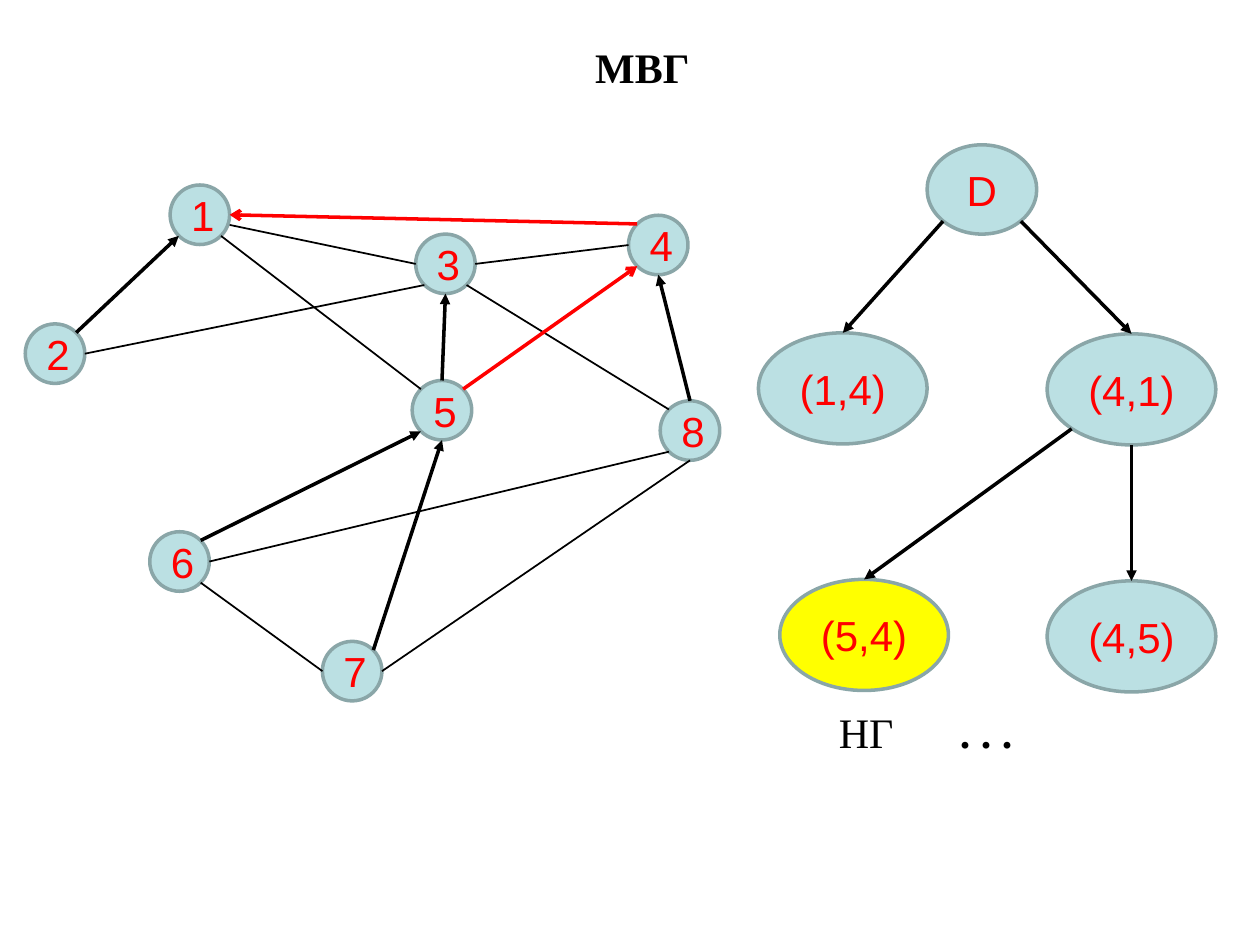
from lxml import etree
from pptx import Presentation
from pptx.dml.color import RGBColor
from pptx.enum import shapes, text
from pptx.oxml import ns
from pptx.util import Cm, Pt

HUES = {"node": "BBE0E3", "rim": "8AA6A8", "mark": "FFFF00",
        "red": "FF0000", "black": "000000"}
DIAG = 0.71
SITES = {"n": (0, -1), "ne": (DIAG, -DIAG), "e": (1, 0), "ese": (1, 0.34),
         "se": (DIAG, DIAG), "s": (0, 1), "sw": (-DIAG, DIAG),
         "w": (-1, 0), "nw": (-DIAG, -DIAG)}
DISC = (1.2, 1.2)
OVAL = (3.4, 2.24)

NODES = {
    "1": (3.43, 3.73), "2": (0.51, 6.53), "3": (8.38, 4.72),
    "4": (12.67, 4.34), "5": (8.31, 7.67), "6": (3.02, 10.72),
    "7": (6.5, 12.93), "8": (13.31, 8.08),
}
LEAVES = {
    "(1,4)": (15.29, 6.71), "(4,1)": (21.11, 6.73),
    "(5,4)": (15.72, 11.68), "(4,5)": (21.11, 11.71),
}
EDGES = [
    ("4", "w", "3", "e"), ("1", "ese", "3", "w"), ("6", "se", "7", "w"),
    ("2", "e", "3", "sw"), ("1", "se", "5", "nw"), ("3", "se", "8", "nw"),
    ("6", "e", "8", "sw"), ("7", "e", "8", "s"),
]
ARCS = [
    ("2", "ne", "1", "sw"), ("5", "n", "3", "s"), ("8", "n", "4", "s"),
    ("6", "ne", "5", "sw"), ("7", "ne", "5", "s"),
    ("D", "se", "(4,1)", "n"), ("D", "sw", "(1,4)", "n"),
    ("(4,1)", "s", "(4,5)", "n"), ("(4,1)", "sw", "(5,4)", "n"),
]
RED_ARCS = [("4", "nw", "1", "e"), ("5", "ne", "4", "sw")]


def hue(name):
    return RGBColor.from_string(HUES[name])


def write(frame, words, face, tint, bold=False, align=None):
    frame.text = words
    line = frame.paragraphs[0]
    line.alignment = align
    font = line.runs[0].font
    font.name, font.size, font.bold = face, Pt(24), bold
    font.color.rgb = hue(tint)


def add_node(slide, words, spot, size, fill="node"):
    box = [Cm(n) for n in spot + size]
    node = slide.shapes.add_shape(shapes.MSO_SHAPE.OVAL, *box)
    node.shadow.inherit = False
    node.fill.solid()
    node.fill.fore_color.rgb = hue(fill)
    node.line.color.rgb = hue("rim")
    node.line.width = Pt(2)
    node.text_frame.vertical_anchor = text.MSO_ANCHOR.MIDDLE
    write(node.text_frame, words, "Arial", "red", align=text.PP_ALIGN.CENTER)
    return node


def find_site(node, side):
    dx, dy = SITES[side]
    return (int(node.left + node.width * (1 + dx) / 2),
            int(node.top + node.height * (1 + dy) / 2))


def add_edge(slide, nodes, ends, width=1, tint="black", tip=None):
    start, out, stop, into = ends
    edge = slide.shapes.add_connector(
        shapes.MSO_CONNECTOR.STRAIGHT,
        *find_site(nodes[start], out), *find_site(nodes[stop], into))
    edge.line.color.rgb = hue(tint)
    edge.line.width = Pt(width)
    if tip:
        etree.SubElement(edge.line._get_or_add_ln(), ns.qn("a:tailEnd"), type=tip)
    etree.SubElement(edge._element.spPr, ns.qn("a:effectLst"))


def add_label(slide, words, box, bold=False):
    label = slide.shapes.add_textbox(*[Cm(n) for n in box])
    label.text_frame.word_wrap = False
    write(label.text_frame, words, "Times New Roman", "black", bold)


def set_title(slide, words):
    title = slide.shapes.title
    title.left, title.top, title.width, title.height = (
        Cm(11.73), Cm(0.71), Cm(2.44), Cm(1.3))
    frame = title.text_frame
    frame.word_wrap = False
    frame.auto_size = text.MSO_AUTO_SIZE.NONE
    frame.vertical_anchor = text.MSO_ANCHOR.TOP
    write(frame, words, "Times New Roman", "black", True, text.PP_ALIGN.CENTER)


def main():
    deck = Presentation()
    deck.slide_width, deck.slide_height = Cm(25.4), Cm(19.05)
    slide = deck.slides.add_slide(deck.slide_layouts[5])
    set_title(slide, "МВГ")

    nodes = {"D": add_node(slide, "D", (18.69, 2.92), (2.21, 1.8))}
    for words, spot in LEAVES.items():
        fill = "mark" if words == "(5,4)" else "node"
        nodes[words] = add_node(slide, words, spot, OVAL, fill)
    for words, spot in NODES.items():
        nodes[words] = add_node(slide, words, spot, DISC)

    for ends in EDGES:
        add_edge(slide, nodes, ends)
    for ends in ARCS:
        add_edge(slide, nodes, ends, 2, tip="triangle")
    for ends in RED_ARCS:
        add_edge(slide, nodes, ends, 2, "red", "arrow")

    add_label(slide, "НГ", (16.66, 14.12, 1.63, 1.3))
    add_label(slide, ". . .", (19.1, 14.12, 1.8, 1.3), True)
    deck.save("out.pptx")


if __name__ == "__main__":
    main()
